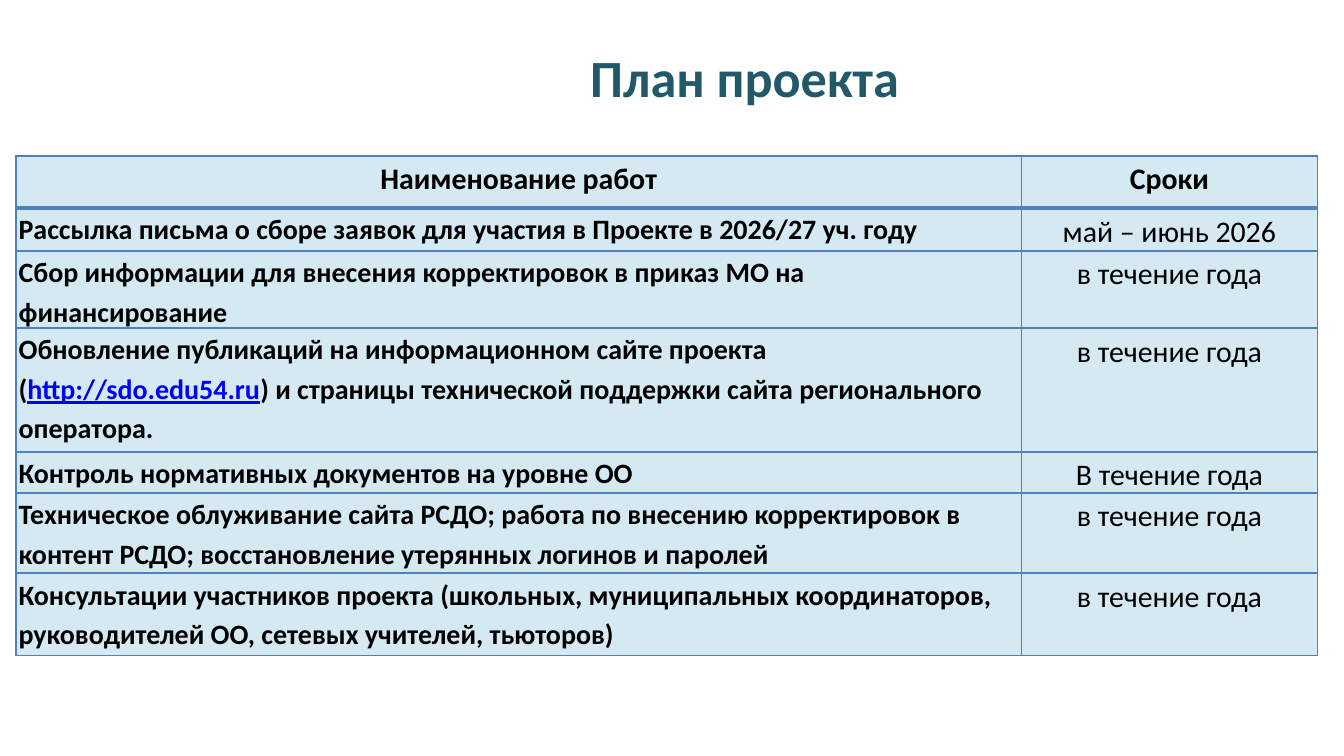
from lxml.etree import SubElement
from pptx import Presentation
from pptx.dml.color import RGBColor
from pptx.enum.text import MSO_ANCHOR, PP_ALIGN as Align
from pptx.oxml.ns import qn
from pptx.util import Pt

COLORS = {"title": "215968", "text": "000000", "link": "0000FF",
          "cell": "D4E9F1", "border": "4F81BD"}
FONT = "Calibri"
COLUMN_WIDTHS = (538.7, 158.6)
HEADER = ("Наименование работ", "Сроки")
HEADER_HEIGHT = 28

# Row height, pieces of the task text (odd pieces are web addresses), term
TASKS = [
    (22.9, ["Рассылка письма о сборе заявок для участия в Проекте в 2026/27 уч. году"],
     "май – июнь 2026"),
    (41.2, ["Сбор информации для внесения корректировок в приказ МО на финансирование"],
     "в течение года"),
    (66.3, ["Обновление публикаций на информационном сайте проекта (",
            "http://sdo.edu54.ru",
            ") и страницы технической поддержки сайта регионального оператора."],
     "в течение года"),
    (22.1, ["Контроль нормативных документов на уровне ОО"], "В течение года"),
    (43, ["Техническое облуживание сайта РСДО; работа по внесению корректировок в "
          "контент РСДО; восстановление утерянных логинов и паролей"],
     "в течение года"),
    (44, ["Консультации участников проекта (школьных, муниципальных координаторов, "
          "руководителей ОО, сетевых учителей, тьюторов)"],
     "в течение года"),
]


def rgb(name):
    return RGBColor.from_string(COLORS[name])


def write(frame, pieces, size=16, bold=False, color="text", align=Align.LEFT, spacing=1.0):
    para = frame.paragraphs[0]
    para.alignment = align
    para.line_spacing = spacing
    for index, piece in enumerate(pieces):
        is_link = index % 2 == 1
        span = para.add_run()
        span.text = piece
        span.font.name = FONT
        span.font.size = Pt(size)
        span.font.bold = bold
        span.font.underline = is_link
        span.font.color.rgb = rgb("link" if is_link else color)
    return para


def add_border(cell, side, width):
    line = SubElement(cell._tc.get_or_add_tcPr(), qn(f"a:ln{side}"), w=str(Pt(width)))
    fill = SubElement(line, qn("a:solidFill"))
    SubElement(fill, qn("a:srgbClr"), val=COLORS["border"])


def fill_cell(cell, pieces, top_line=1, bottom_line=1, **text_format):
    cell.margin_left = cell.margin_right = Pt(1.5)
    cell.margin_top = cell.margin_bottom = 0
    cell.vertical_anchor = MSO_ANCHOR.TOP
    write(cell.text_frame, pieces, spacing=1.15, **text_format)
    for side, width in (("L", 1), ("R", 1), ("T", top_line), ("B", bottom_line)):
        add_border(cell, side, width)
    cell.fill.solid()
    cell.fill.fore_color.rgb = rgb("cell")


def add_title(page, left, top, width, height):
    box = page.shapes.add_textbox(Pt(left), Pt(top), Pt(width), Pt(height))
    box.text_frame.word_wrap = True
    para = write(box.text_frame, ["План проекта"], size=28, bold=True,
                 color="title", align=Align.CENTER)
    para._p.get_or_add_pPr().set("indent", str(Pt(35.3)))


def add_plan(page, left, top):
    heights = [HEADER_HEIGHT] + [height for height, _, _ in TASKS]
    table = page.shapes.add_table(len(heights), len(COLUMN_WIDTHS), Pt(left), Pt(top),
                                  Pt(sum(COLUMN_WIDTHS)), Pt(sum(heights))).table
    for column, width in zip(table.columns, COLUMN_WIDTHS):
        column.width = Pt(width)
    for row, height in zip(table.rows, heights):
        row.height = Pt(height)

    # Header row, with a thicker line under it
    for cell, label in zip(table.rows[0].cells, HEADER):
        fill_cell(cell, [label], bottom_line=2, bold=True, align=Align.CENTER)

    # Tasks and terms
    for index, (_, task, term) in enumerate(TASKS, start=1):
        top_line = 2 if index == 1 else 1
        fill_cell(table.cell(index, 0), task, top_line, size=15, bold=True)
        fill_cell(table.cell(index, 1), [term], top_line, align=Align.CENTER)


def main():
    deck = Presentation()
    deck.slide_width, deck.slide_height = Pt(720), Pt(405)
    page = deck.slides.add_slide(deck.slide_layouts[6])
    add_title(page, 144.7, 20.9, 473, 41)
    add_plan(page, 8.5, 83.5)
    deck.save("out.pptx")


if __name__ == "__main__":
    main()
